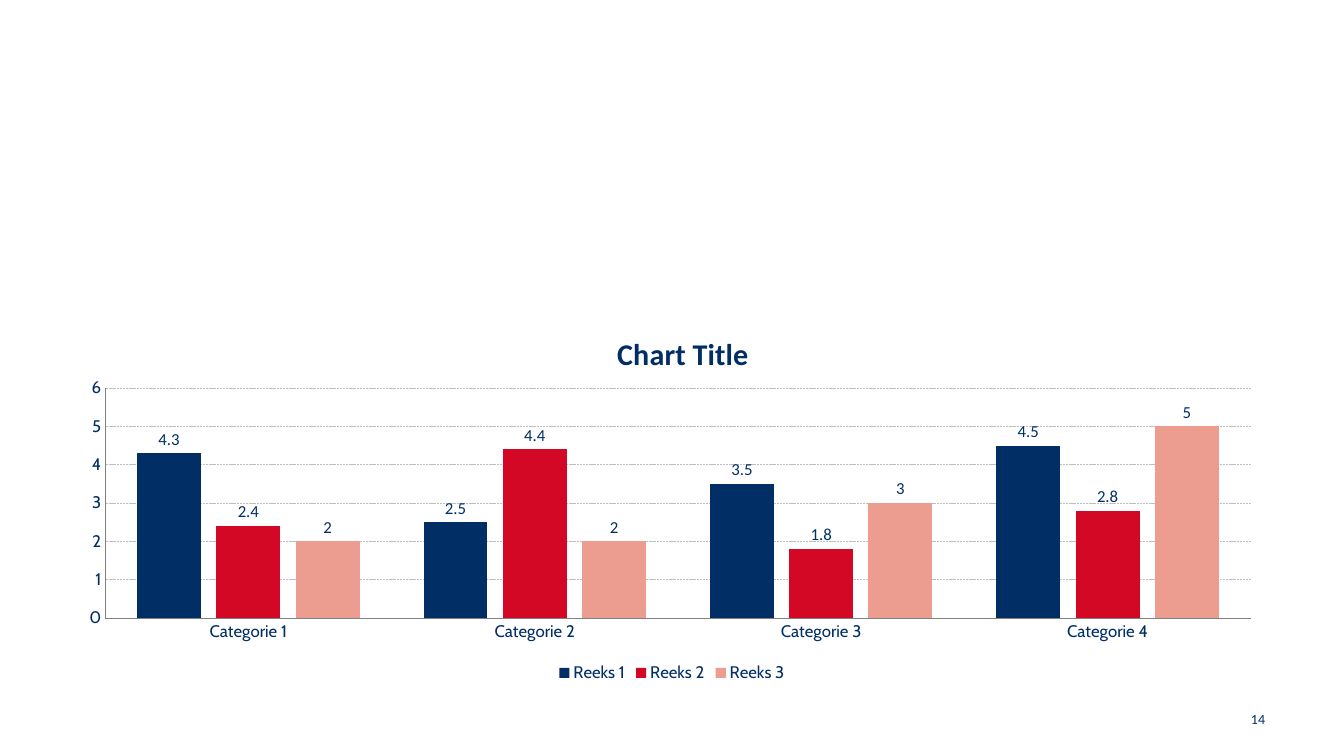
from lxml.etree import SubElement
from pptx import Presentation
from pptx.chart.data import CategoryChartData
from pptx.dml.color import RGBColor
from pptx.enum.chart import XL_CHART_TYPE, XL_LABEL_POSITION, XL_LEGEND_POSITION, XL_TICK_MARK
from pptx.enum.dml import MSO_LINE
from pptx.enum.text import MSO_ANCHOR, PP_ALIGN
from pptx.oxml import parse_xml
from pptx.oxml.ns import nsdecls, qn
from pptx.util import Pt

PX = 914400 / 100.8
NAVY, RED, SALMON = "002E65", "D20824", "ED9D90"


def style_font(font, name, size, bold=False):
    font.name, font.size, font.bold = name, Pt(size), bold
    font.color.rgb = RGBColor.from_string(NAVY)


def manual_layout(**settings):
    layout = parse_xml(f"<c:layout {nsdecls('c')}><c:manualLayout/></c:layout>")
    for tag, value in settings.items():
        SubElement(layout[0], qn(f"c:{tag}")).set("val", str(value))
    return layout


prs = Presentation()
prs.slide_width, prs.slide_height = round(1344 * PX), round(756 * PX)
slide = prs.slides.add_slide(prs.slide_layouts[6])

# Page number
page_number = slide.shapes.add_textbox(*(round(v * PX) for v in (984, 699, 291, 40)))
frame = page_number.text_frame
frame.word_wrap = True
frame.vertical_anchor = MSO_ANCHOR.MIDDLE
frame.paragraphs[0].alignment = PP_ALIGN.RIGHT
number = frame.paragraphs[0].add_run()
number.text = "14"
style_font(number.font, "Calibri", 10)

# Chart data
reeksen = [
    ("Reeks 1", (4.3, 2.5, 3.5, 4.5), NAVY),
    ("Reeks 2", (2.4, 4.4, 1.8, 2.8), RED),
    ("Reeks 3", (2, 2, 3, 5), SALMON),
]
data = CategoryChartData()
data.categories = [f"Categorie {n}" for n in range(1, 5)]
for name, values, _ in reeksen:
    data.add_series(name, values)
chart = slide.shapes.add_chart(
    XL_CHART_TYPE.COLUMN_CLUSTERED,
    *(round(v * PX) for v in (69, 304, 1206, 383)), data).chart
style_font(chart.font, "Cabin", 10)

# Title
chart.has_title = True
heading = chart.chart_title.text_frame.paragraphs[0].add_run()
heading.text = "Chart Title"
style_font(heading.font, "Calibri", 21.5, bold=True)
title_xml = chart._chartSpace.chart.find(qn("c:title"))
for old in title_xml.findall(qn("c:layout")):
    title_xml.remove(old)
title_xml.find(qn("c:tx")).addnext(
    manual_layout(xMode="edge", yMode="edge", x=0.45, y=0.06))
chart.chart_title.include_in_layout = False

# Columns and value labels
plot = chart.plots[0]
plot.vary_by_categories = False
plot.gap_width, plot.overlap = 100, -24
for series, (_, _, color) in zip(plot.series, reeksen):
    series.format.fill.solid()
    series.format.fill.fore_color.rgb = RGBColor.from_string(color)
    labels = series.data_labels
    labels.show_value = True
    labels.position = XL_LABEL_POSITION.OUTSIDE_END
    style_font(labels.font, "Calibri", 12)

# Plot position
plot_area = chart._chartSpace.chart.plotArea
for old in plot_area.findall(qn("c:layout")):
    plot_area.remove(old)
plot_area.insert(0, manual_layout(
    layoutTarget="inner", xMode="edge", yMode="edge", x=0.03, y=0.22, w=0.95, h=0.6))

# Axes and gridlines
for axis in (chart.category_axis, chart.value_axis):
    axis.major_tick_mark = axis.minor_tick_mark = XL_TICK_MARK.NONE
    axis.format.line.color.rgb = RGBColor.from_string("808080")
    axis.format.line.width = Pt(0.5)
    style_font(axis.tick_labels.font, "Cabin", 12)
value_axis = chart.value_axis
value_axis.minimum_scale, value_axis.maximum_scale, value_axis.major_unit = 0, 6, 1
grid = value_axis.major_gridlines.format.line
grid.color.rgb = RGBColor.from_string("BFBFBF")
grid.width = Pt(0.5)
grid.dash_style = MSO_LINE.SQUARE_DOT

# Legend
chart.has_legend = True
chart.legend.position = XL_LEGEND_POSITION.BOTTOM
chart.legend.include_in_layout = False
style_font(chart.legend.font, "Cabin", 12)

prs.save("out.pptx")
